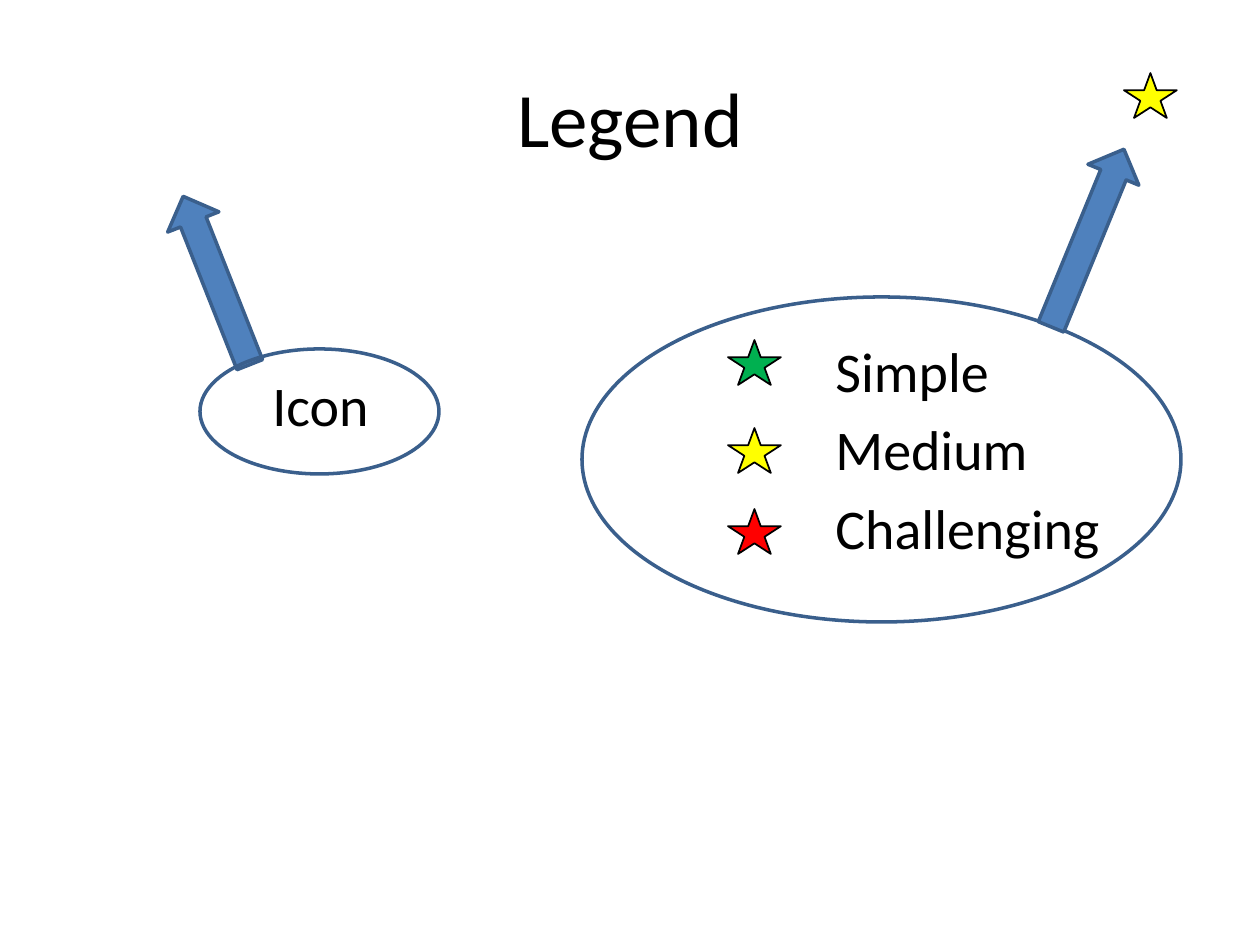
from dataclasses import dataclass
from typing import Optional

import pptx
import pptx.dml.color
import pptx.enum.shapes
import pptx.enum.text
import pptx.util

RGBColor = pptx.dml.color.RGBColor
MSO_SHAPE = pptx.enum.shapes.MSO_SHAPE
PP_ALIGN = pptx.enum.text.PP_ALIGN
MSO_ANCHOR = pptx.enum.text.MSO_ANCHOR

BLACK = RGBColor(0x00, 0x00, 0x00)
BLUE = RGBColor(0x4F, 0x81, 0xBD)
DARK_BLUE = RGBColor(0x3A, 0x5F, 0x8C)
GREEN = RGBColor(0x00, 0xB0, 0x50)
YELLOW = RGBColor(0xFF, 0xFF, 0x00)
RED = RGBColor(0xFF, 0x00, 0x00)

PX_PER_INCH = 126
STAR_W, STAR_H = 53, 45
LEVEL_STAR_X = 728


def px(n: int) -> int:
    return pptx.util.Emu(round(n * 914400 / PX_PER_INCH))


@dataclass(frozen=True)
class Box:
    x: int
    y: int
    w: int
    h: int

    def emu(self) -> tuple[int, ...]:
        return px(self.x), px(self.y), px(self.w), px(self.h)


@dataclass(frozen=True)
class Figure:
    kind: MSO_SHAPE
    box: Box
    fill: Optional[RGBColor] = None
    line: RGBColor = DARK_BLUE
    weight: int = 2
    rotation: float = 0


def star(x: int, y: int, fill: RGBColor) -> Figure:
    return Figure(MSO_SHAPE.STAR_5_POINT, Box(x, y, STAR_W, STAR_H), fill, BLACK, 1)


def draw_figure(slide, fig: Figure) -> None:
    sp = slide.shapes.add_shape(fig.kind, *fig.box.emu())
    sp.shadow.inherit = False
    sp.rotation = fig.rotation
    if fig.fill is None:
        sp.fill.background()
    else:
        sp.fill.solid()
        sp.fill.fore_color.rgb = fig.fill
    sp.line.color.rgb = fig.line
    sp.line.width = pptx.util.Pt(fig.weight)


def write_text(sp, text: str, *, size: int = 32, align=PP_ALIGN.LEFT,
               anchor=MSO_ANCHOR.TOP, before: float = 0, indent: int = 0) -> None:
    """Fill a shape with text, one paragraph a line."""
    tf = sp.text_frame
    tf.word_wrap = True
    tf.vertical_anchor = anchor
    tf.text = text
    for p in tf.paragraphs:
        p.alignment = align
        p.space_before = pptx.util.Pt(before)
        if indent:
            p._p.get_or_add_pPr().set("marL", str(px(indent)))
        for r in p.runs:
            r.font.name = "Calibri"
            r.font.size = pptx.util.Pt(size)
            r.font.color.rgb = BLACK


LEVELS_OUTLINE = Figure(MSO_SHAPE.OVAL, Box(582, 297, 599, 325))
FIGURES = [
    # Example star, then one star for each level
    star(1124, 73, YELLOW),
    star(LEVEL_STAR_X, 509, RED),
    star(LEVEL_STAR_X, 428, YELLOW),
    star(LEVEL_STAR_X, 340, GREEN),
    # Arrows pointing up and away from the ovals
    Figure(MSO_SHAPE.DOWN_ARROW, Box(189, 190, 55, 181), BLUE, rotation=158.4),
    Figure(MSO_SHAPE.DOWN_ARROW, Box(1060, 142, 55, 192), BLUE, rotation=202.3),
    # Icon outline
    Figure(MSO_SHAPE.OVAL, Box(200, 349, 239, 125)),
]


def main() -> None:
    prs = pptx.Presentation()
    prs.slide_width, prs.slide_height = px(1260), px(945)
    slide = prs.slides.add_slide(prs.slide_layouts[5])

    draw_figure(slide, LEVELS_OUTLINE)

    # Title
    title = slide.shapes.title
    title.left, title.top, title.width, title.height = Box(63, 38, 1134, 157).emu()
    write_text(title, "Legend", size=44, align=PP_ALIGN.CENTER, anchor=MSO_ANCHOR.MIDDLE)

    # Level names
    levels = slide.shapes.add_textbox(*Box(697, 330, 504, 621).emu())
    write_text(levels, "Simple\nMedium\nChallenging", before=6.4, indent=PX_PER_INCH)

    # Icon label
    icon = slide.shapes.add_textbox(*Box(260, 364, 179, 81).emu())
    write_text(icon, "Icon")

    for fig in FIGURES:
        draw_figure(slide, fig)

    prs.save("out.pptx")


if __name__ == "__main__":
    main()
